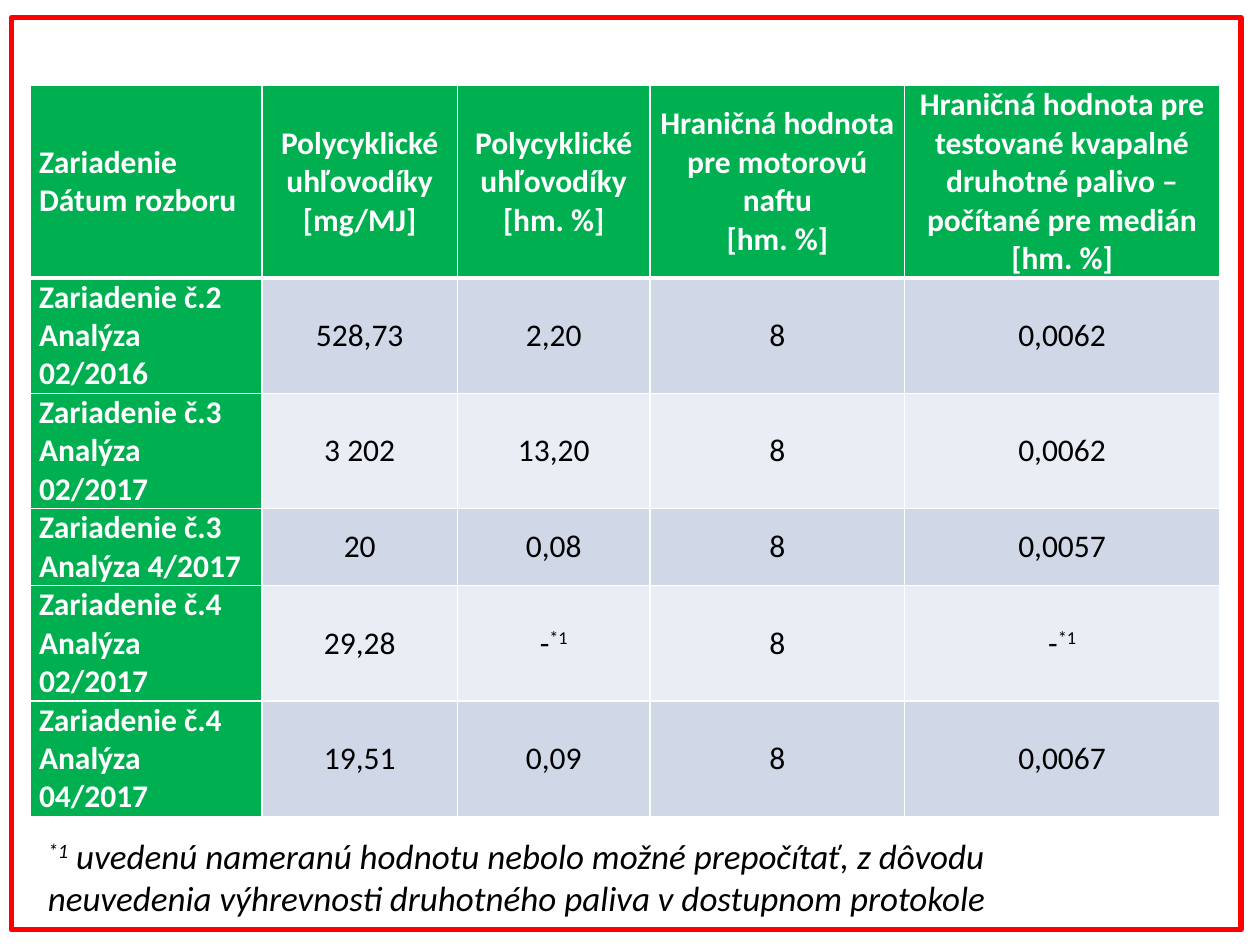
"""Build a slide with a table of polycyclic hydrocarbon analyses and a footnote."""
from dataclasses import dataclass

import lxml.etree
import pptx
import pptx.dml.color
import pptx.enum.shapes
import pptx.enum.text
import pptx.oxml.ns
import pptx.util

Inches = pptx.util.Inches
Pt = pptx.util.Pt
qn = pptx.oxml.ns.qn

GREEN, WHITE, BLACK, RED = "00B050", "FFFFFF", "000000", "FF0000"
BANDS = ("D0D8E8", "E9EDF4")
MARK = "*1"
COLUMN_WIDTHS = (1.84, 1.55, 1.53, 2.02, 2.5)
LINE_HEIGHT = 0.305
HEADERS = (
    "Zariadenie\nDátum rozboru",
    "Polycyklické uhľovodíky\n[mg/MJ]",
    "Polycyklické uhľovodíky\n[hm. %]",
    "Hraničná hodnota pre motorovú naftu\n[hm. %]",
    "Hraničná hodnota pre testované kvapalné druhotné palivo – počítané pre medián\n[hm. %]",
)
FOOTNOTE = (
    "*1 uvedenú nameranú hodnotu nebolo možné prepočítať, z dôvodu "
    "neuvedenia výhrevnosti druhotného paliva v dostupnom protokole"
)


@dataclass(frozen=True)
class Analysis:
    device: str
    date: str
    energy_share: str
    mass_share: str
    fuel_limit: str
    lines: int = 3

    def texts(self) -> tuple[str, ...]:
        label = f"Zariadenie {self.device}\nAnalýza {self.date}"
        return label, self.energy_share, self.mass_share, "8", self.fuel_limit


ANALYSES = (
    Analysis("č.2", "02/2016", "528,73", "2,20", "0,0062"),
    Analysis("č.3", "02/2017", "3 202", "13,20", "0,0062"),
    Analysis("č.3", "4/2017", "20", "0,08", "0,0057", lines=2),
    Analysis("č.4", "02/2017", "29,28", "-*1", "-*1"),
    Analysis("č.4", "04/2017", "19,51", "0,09", "0,0067"),
)


def color(value: str) -> pptx.dml.color.RGBColor:
    """Turn a hex string into a colour."""
    return pptx.dml.color.RGBColor.from_string(value)


def write_marked(para, text: str) -> None:
    """Write text with the footnote mark raised."""
    for part in text.partition(MARK):
        if part:
            span = para.add_run()
            span.text = part
            if part == MARK:
                span.font._element.set("baseline", "30000")


def style_paragraph(para, size: float, hue: str, bold: bool = False, italic: bool = False) -> None:
    """Set the font of a whole paragraph."""
    font = para.font
    font.name, font.size = "Calibri", Pt(size)
    font.bold, font.italic = bold, italic
    font.color.rgb = color(hue)


def set_borders(cell, top: float, bottom: float) -> None:
    """Draw white borders round a cell."""
    properties = cell._tc.get_or_add_tcPr()
    for side, width in (("L", 1), ("R", 1), ("T", top), ("B", bottom)):
        line = lxml.etree.SubElement(properties, qn(f"a:ln{side}"), w=str(Pt(width)))
        fill = lxml.etree.SubElement(line, qn("a:solidFill"))
        lxml.etree.SubElement(fill, qn("a:srgbClr"), val=WHITE)


def fill_cell(cell, text: str, row: int, column: int) -> None:
    """Format one table cell and write its text."""
    heading = row == 0 or column == 0
    set_borders(cell, top=3 if row == 1 else 1, bottom=3 if row == 0 else 1)
    cell.fill.solid()
    cell.fill.fore_color.rgb = color(GREEN if heading else BANDS[(row - 1) % 2])
    cell.margin_left = cell.margin_right = Inches(0.07)
    cell.margin_top = cell.margin_bottom = 0
    cell.vertical_anchor = pptx.enum.text.MSO_ANCHOR.MIDDLE
    for index, line in enumerate(text.split("\n")):
        para = cell.text_frame.add_paragraph() if index else cell.text_frame.paragraphs[0]
        if column:
            para.alignment = pptx.enum.text.PP_ALIGN.CENTER
        style_paragraph(para, 18, WHITE if heading else BLACK, bold=heading)
        write_marked(para, line)


def add_results(page) -> None:
    """Add the table of analyses."""
    rows = (HEADERS, *(analysis.texts() for analysis in ANALYSES))
    heights = [LINE_HEIGHT * lines for lines in (5, *(a.lines for a in ANALYSES))]
    table = page.shapes.add_table(
        len(rows), len(COLUMN_WIDTHS), Inches(0.24), Inches(0.68),
        Inches(sum(COLUMN_WIDTHS)), Inches(sum(heights)),
    ).table
    for column, width in zip(table.columns, COLUMN_WIDTHS):
        column.width = Inches(width)
    for row, height in zip(table.rows, heights):
        row.height = Inches(height)
    for row_index, texts in enumerate(rows):
        for column_index, text in enumerate(texts):
            fill_cell(table.cell(row_index, column_index), text, row_index, column_index)


def add_footnote(page) -> None:
    """Write the footnote in the body placeholder."""
    box = page.placeholders[1]
    box.left, box.top = Inches(0.28), Inches(6.57)
    box.width, box.height = Inches(9), Inches(0.82)
    frame = box.text_frame
    frame.word_wrap = True
    frame.auto_size = pptx.enum.text.MSO_AUTO_SIZE.NONE
    frame.margin_right = Inches(0.15)
    para = frame.paragraphs[0]
    style_paragraph(para, 20, BLACK, italic=True)
    properties = para._p.get_or_add_pPr()
    properties.set("marL", "0")
    properties.set("indent", "0")
    properties.insert(0, properties.makeelement(qn("a:buNone")))
    write_marked(para, FOOTNOTE)


def add_frame(page) -> None:
    """Draw the red frame round the page."""
    frame = page.shapes.add_shape(
        pptx.enum.shapes.MSO_SHAPE.RECTANGLE,
        Inches(0.09), Inches(0.14), Inches(9.76), Inches(7.24),
    )
    frame.shadow.inherit = False
    frame.fill.background()
    frame.line.color.rgb = color(RED)
    frame.line.width = Pt(3)


def main() -> None:
    """Build and save the deck."""
    deck = pptx.Presentation()
    deck.slide_width, deck.slide_height = Inches(10), Inches(7.5)
    page = deck.slides.add_slide(deck.slide_layouts[1])
    title = page.shapes.title.element
    title.getparent().remove(title)
    add_footnote(page)
    add_results(page)
    add_frame(page)
    deck.save("out.pptx")


if __name__ == "__main__":
    main()
